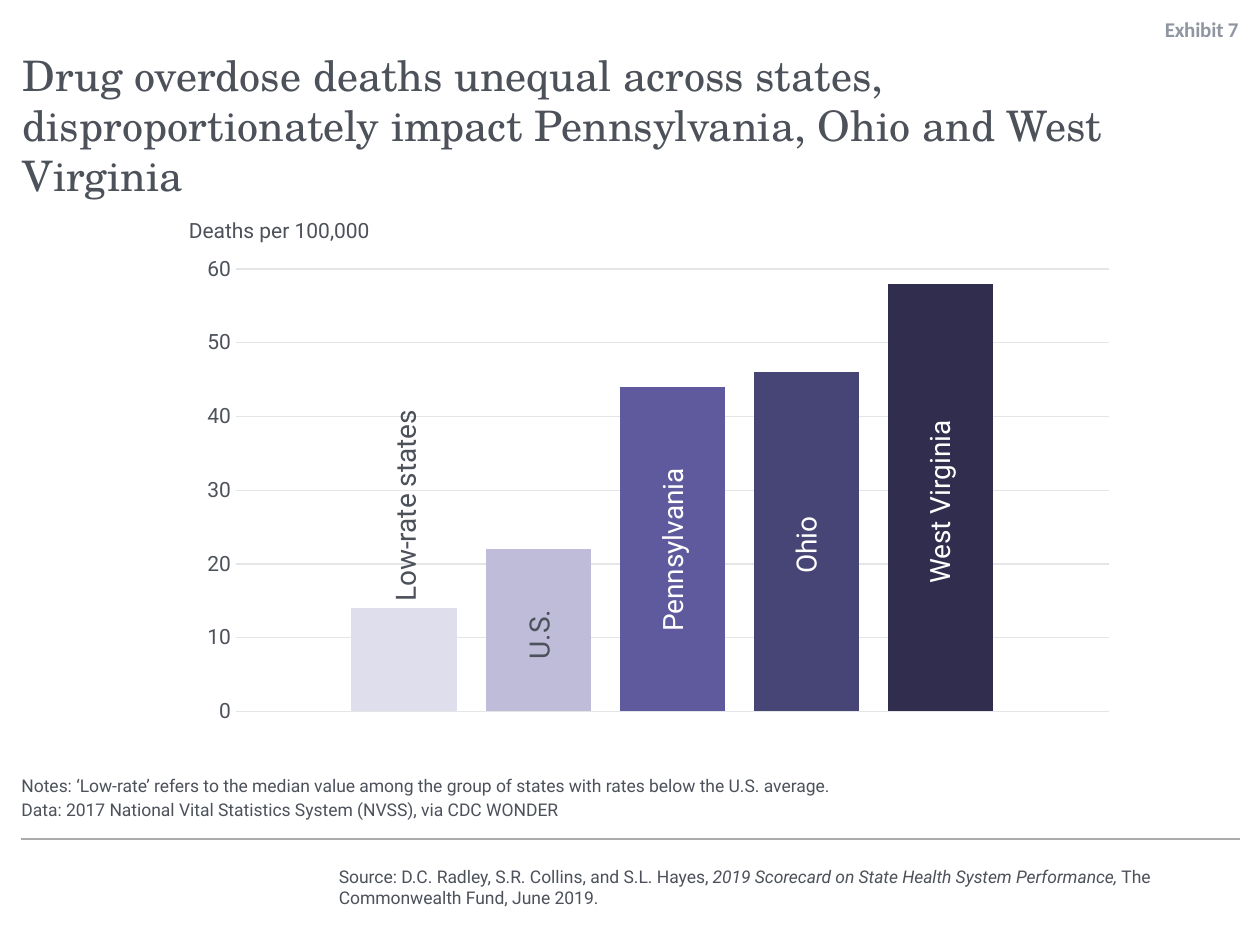
"""Build the exhibit slide on drug overdose deaths by state."""
from lxml import etree
from pptx import Presentation, util as u
from pptx.chart.data import CategoryChartData
from pptx.dml.color import RGBColor
from pptx.enum import chart as ch, shapes, text
from pptx.oxml import parse_xml
from pptx.oxml.ns import nsdecls, qn

INK = RGBColor(0x4C, 0x51, 0x5A)
GREY = RGBColor(0x8F, 0x95, 0xA1)
RULE = RGBColor(0xAB, 0xAB, 0xAB)
GRID = RGBColor(0xE3, 0xE5, 0xE7)
WHITE = RGBColor(0xFF, 0xFF, 0xFF)
BARS = [
    ("Low-rate states", 14, RGBColor(0xDF, 0xDE, 0xEC), INK, 24.6, 48.6),
    ("U.S.", 22, RGBColor(0xBE, 0xBC, 0xD9), INK, 12.7, 67.13),
    ("Pennsylvania", 44, RGBColor(0x5F, 0x5A, 0x9D), WHITE, 26.1, 58.2),
    ("Ohio", 46, RGBColor(0x47, 0x44, 0x76), WHITE, 27.1, 57.67),
    ("West Virginia", 58, RGBColor(0x30, 0x2D, 0x4E), WHITE, 33.8, 53.13),
]
FIRST_BAR, BAR_STEP, LABEL_H = 32.15, 10.6, 4.93
LEFT, TOP, ALIGN = text.PP_ALIGN.LEFT, text.MSO_ANCHOR.TOP, text.PP_ALIGN
MIDDLE, BOTTOM = text.MSO_ANCHOR.MIDDLE, text.MSO_ANCHOR.BOTTOM

prs = Presentation()
prs.slide_width, prs.slide_height = u.Inches(10), u.Inches(7.5)
s = prs.slides.add_slide(prs.slide_layouts[3])


def share(x, y, w, h):
    """Turn percentages of the slide into left, top, width and height."""
    px, py = prs.slide_width / 100, prs.slide_height / 100
    return round(x * px), round(y * py), round(w * px), round(h * py)


def write(sp, paras, fmt, align=LEFT, anchor=TOP, inset=None):
    """Fill a shape with paragraphs, each a list of (text, italic) runs."""
    tf = sp.text_frame
    tf.word_wrap, tf.auto_size = True, text.MSO_AUTO_SIZE.NONE
    tf.vertical_anchor = anchor
    if inset is not None:
        for side in ("left", "top", "right", "bottom"):
            setattr(tf, f"margin_{side}", inset)
    for i, runs in enumerate(paras):
        p = tf.add_paragraph() if i else tf.paragraphs[0]
        p.alignment = align
        p.space_before = u.Pt(2 if i else 0)
        if sp.is_placeholder:
            pr = p._p.get_or_add_pPr()
            pr.set("marL", "0")
            pr.set("indent", "0")
            etree.SubElement(pr, qn("a:buNone"))
        for words, italic in runs:
            r = p.add_run()
            r.text = words
            for key, value in {"name": "Roboto", "italic": italic, **fmt}.items():
                if key == "color":
                    r.font.color.rgb = value
                else:
                    setattr(r.font, key, value)


small = {"size": u.Pt(10), "color": INK}
medium = {"size": u.Pt(12), "color": INK}

rule = s.shapes.add_connector(shapes.MSO_CONNECTOR.STRAIGHT, *share(1.7, 88.8, 0, 0))
rule.left, rule.top, rule.width, rule.height = share(1.7, 88.8, 96.7, 0)
rule.line.color.rgb, rule.line.width = RULE, u.Pt(0.75)
etree.SubElement(rule._element.spPr, qn("a:effectLst"))

source = s.shapes.add_textbox(*share(25.9, 90.93, 72.5, 5.87))
write(source, [[
    ("Source: D.C. Radley, S.R. Collins, and S.L. Hayes, ", False),
    ("2019 Scorecard on State Health System Performance, ", True),
    ("The Commonwealth Fund, June 2019.", False),
]], small, anchor=MIDDLE)

title, notes, exhibit = s.placeholders
for sp, place in (
    (title, (1.8, 5.2, 96.7, 13.87)),
    (notes, (1.7, 80.93, 96.7, 5.87)),
    (exhibit, (79.6, 0.93, 18.7, 4.4)),
):
    sp.left, sp.top, sp.width, sp.height = share(*place)

write(title, [[(
    "Drug overdose deaths unequal across states, disproportionately impact "
    "Pennsylvania, Ohio and West Virginia", False)]],
    {"name": "TeX Gyre Schola", "size": u.Pt(24), "color": INK}, inset=0)
write(notes, [
    [("Notes: ‘Low-rate’ refers to the median value among the group of states "
      "with rates below the U.S. average.", False)],
    [("Data: 2017 National Vital Statistics System (NVSS), via CDC WONDER", False)],
], small, anchor=BOTTOM, inset=0)
write(exhibit, [[("Exhibit 7", False)]],
      {"name": "Calibri", "size": u.Pt(12), "bold": True, "color": GREY},
      ALIGN.RIGHT, MIDDLE, 0)
exhibit.text_frame.paragraphs[0].runs[0].font._element.set("spc", "-10")

data = CategoryChartData()
data.categories = ["1"]
for i, bar in enumerate(BARS, 1):
    data.add_series(f"Series {i}", [bar[1]])
chart = s.shapes.add_chart(ch.XL_CHART_TYPE.COLUMN_CLUSTERED,
                           *share(15, 26.4, 74.5, 51.47), data).chart
chart.has_legend = chart.has_title = False
chart.font.name, chart.font.size, chart.font.color.rgb = "Roboto", u.Pt(10), INK

plot = chart.plots[0]
plot.gap_width, plot.overlap, plot.vary_by_categories = 219, -27, False
for series, bar in zip(plot.series, BARS):
    series.format.fill.solid()
    series.format.fill.fore_color.rgb = bar[2]

chart.category_axis.visible = False
axis = chart.value_axis
for key, value in {"minimum_scale": 0, "maximum_scale": 60, "major_unit": 10,
                   "has_major_gridlines": True,
                   "major_tick_mark": ch.XL_TICK_MARK.NONE}.items():
    setattr(axis, key, value)
axis.format.line.fill.background()
grid = axis.major_gridlines.format.line
grid.color.rgb, grid.width = GRID, u.Pt(0.75)
font = axis.tick_labels.font
font.name, font.size, font.color.rgb = "Roboto", u.Pt(12), INK

area = chart._chartSpace.chart.plotArea
for old in area.findall(qn("c:layout")):
    area.remove(old)
inner = "".join(f'<c:{tag} val="{val}"/>' for tag, val in (
    ("layoutTarget", "inner"), ("xMode", "edge"), ("yMode", "edge"),
    ("x", 0.05), ("y", 0.04), ("w", 0.93), ("h", 0.91)))
area.insert(0, parse_xml(f'<c:layout {nsdecls("c")}><c:manualLayout>{inner}'
                         '</c:manualLayout></c:layout>'))

for i, (name, _, _, color, width, middle) in enumerate(BARS):
    left = FIRST_BAR + i * BAR_STEP - width / 2
    label = s.shapes.add_textbox(*share(left, middle - LABEL_H / 2, width, LABEL_H))
    label.rotation = 270
    write(label, [[(name, False)]], {"size": u.Pt(16), "color": color},
          ALIGN.CENTER if i else LEFT)

unit = s.shapes.add_textbox(*share(14, 22.4, 26.5, 4))
write(unit, [[("Deaths per 100,000", False)]], medium)

prs.save("out.pptx")
